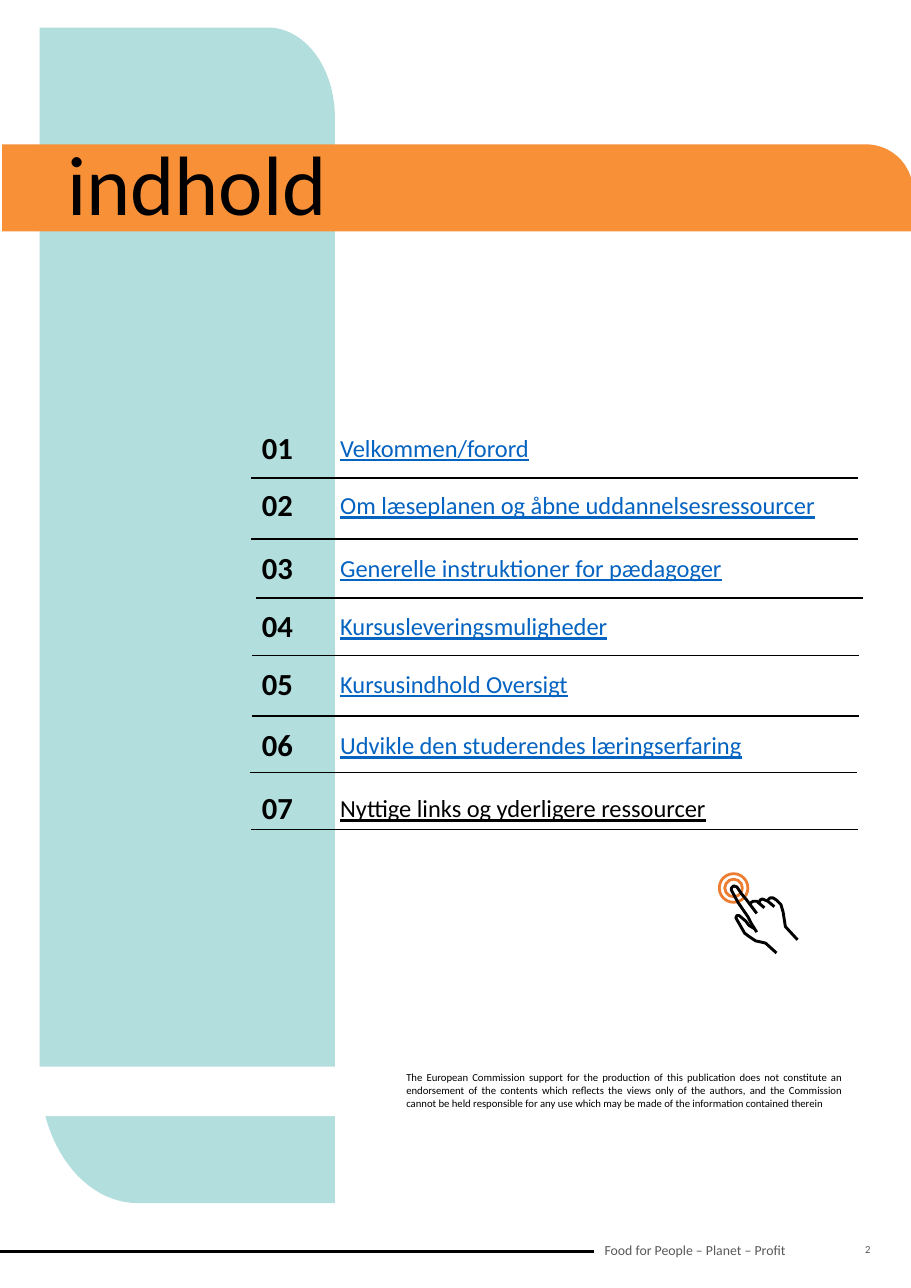
from math import cos, pi, sin

from pptx import Presentation
from pptx.dml.color import RGBColor
from pptx.enum.shapes import MSO_CONNECTOR, MSO_SHAPE
from pptx.enum.text import MSO_ANCHOR as Anchor, PP_ALIGN as Align
from pptx.oxml.ns import qn
from pptx.util import Inches, Pt
from lxml.etree import SubElement

COLORS = {"mint": "B2DEDD", "orange": "F79037", "ring": "ED7D31", "link": "0563C1",
          "black": "000000", "grey": "595959", "white": "FFFFFF"}
WIDTH, HEIGHT = 8.27, 11.69


def put_text(text, left, top, width, height, size, color="black", bold=False,
             underline=False, align=Align.LEFT, anchor=Anchor.MIDDLE,
             spacing=None, before=0):
    frame = slide.shapes.add_textbox(
        Inches(left), Inches(top), Inches(width), Inches(height)).text_frame
    frame.word_wrap = True
    frame.vertical_anchor = anchor
    paragraph = frame.paragraphs[0]
    paragraph.alignment = align
    paragraph.line_spacing = spacing
    paragraph.space_before = Pt(before)
    run = paragraph.add_run()
    run.text = text
    font = run.font
    font.name, font.size = "Calibri", Pt(size)
    font.bold, font.underline = bold, underline
    font.color.rgb = RGBColor.from_string(COLORS[color])


def paint(shape, fill=None, line=None, weight=1):
    """Set fill and line, each left empty when no colour is named, and drop the shadow."""
    shape.shadow.inherit = False
    if fill:
        shape.fill.solid()
        shape.fill.fore_color.rgb = RGBColor.from_string(COLORS[fill])
    else:
        shape.fill.background()
    if line:
        shape.line.color.rgb = RGBColor.from_string(COLORS[line])
        shape.line.width = Pt(weight)
    else:
        shape.line.fill.background()


presentation = Presentation()
presentation.slide_width, presentation.slide_height = Inches(WIDTH), Inches(HEIGHT)
slide = presentation.slides.add_slide(presentation.slide_layouts[6])

# Rounded corners: centre, radii and start angle of a clockwise quarter turn
corners = {"column_top": (2.43, 1.06, 0.61, 0.81, -pi / 2),
           "column_bottom": (1.25, 9.73, 0.89, 1.19, pi / 2),
           "band": (7.86, 1.74, 0.43, 0.43, -pi / 2)}
STEPS = 24
arcs = {name: [(x + rx * cos(start + i * pi / 2 / STEPS),
                y + ry * sin(start + i * pi / 2 / STEPS)) for i in range(STEPS + 1)]
        for name, (x, y, rx, ry, start) in corners.items()}
column = [(0.36, 0.25), *arcs["column_top"], (3.04, 10.92), *arcs["column_bottom"]]
band = [(0.02, 2.1), (0.02, 1.31), *arcs["band"], (8.29, 2.1)]

# Pointing hand, one open stroke for each part
hand = [
    [(6.87, 8.46), (6.82, 8.38), (6.79, 8.32), (6.7, 8.19), (6.64, 8.08), (6.64, 8.06),
     (6.66, 8.04), (6.69, 8.05), (6.73, 8.11), (6.78, 8.17), (6.87, 8.29)],
    [(6.85, 8.43), (6.8, 8.4), (6.77, 8.36), (6.71, 8.31), (6.69, 8.31), (6.68, 8.33),
     (6.72, 8.4), (6.76, 8.47), (6.8, 8.5), (6.86, 8.54), (6.95, 8.56), (7.05, 8.65)],
    [(6.81, 8.21), (6.82, 8.19), (6.84, 8.18), (6.87, 8.18), (6.94, 8.24)],
    [(6.89, 8.2), (6.9, 8.17), (6.92, 8.16), (6.97, 8.18), (7.03, 8.23)],
    [(6.97, 8.17), (6.99, 8.15), (7.02, 8.15), (7.05, 8.17), (7.09, 8.21),
     (7.11, 8.28), (7.13, 8.41), (7.24, 8.53)],
]

for ring_radius in (0.13, 0.08):
    ring = slide.shapes.add_shape(
        MSO_SHAPE.OVAL, Inches(6.66 - ring_radius), Inches(8.06 - ring_radius),
        Inches(2 * ring_radius), Inches(2 * ring_radius))
    paint(ring, line="ring", weight=1.8)

outlines = [(column, "mint", None), (band, "orange", None)]
outlines += [(stroke, None, "black") for stroke in hand]
for points, fill, line in outlines:
    (start_x, start_y), *rest = [(x * 1000, y * 1000) for x, y in points]
    builder = slide.shapes.build_freeform(start_x, start_y, scale=Inches(1) / 1000)
    builder.add_line_segments(rest, close=fill is not None)
    paint(builder.convert_to_shape(), fill, line, weight=1.9)

column_gap = slide.shapes.add_shape(
    MSO_SHAPE.RECTANGLE, Inches(0.23), Inches(9.68), Inches(2.86), Inches(0.45))
paint(column_gap, "white")

put_text("indhold", 0.51, 1.25, 7.45, 1.17, 55, anchor=Anchor.TOP, spacing=0.9, before=8.3)

# Text top, rule left, rule height, title
contents = [
    (3.89, 2.28, 4.34, "Velkommen/forord"),
    (4.41, 2.28, 4.89, "Om læseplanen og åbne uddannelsesressourcer"),
    (4.98, 2.32, 5.43, "Generelle instruktioner for pædagoger"),
    (5.51, 2.29, 5.95, "Kursusleveringsmuligheder"),
    (6.03, 2.29, 6.5, "Kursusindhold Oversigt"),
    (6.59, 2.27, 7.01, "Udvikle den studerendes læringserfaring"),
    (7.16, 2.28, 7.53, "Nyttige links og yderligere ressourcer"),
]
rules = [(0, 5.39, 11.36, 1.5)]
for number, (top, rule_left, rule_y, title) in enumerate(contents, 1):
    title_color = "black" if number == len(contents) else "link"
    put_text(f"{number:02}", 2.28, top, 0.71, 0.38, 20, bold=True, spacing=0.9, before=8.3)
    put_text(title, 2.99, top, 5.28, 0.38, 16, title_color, underline=True,
             spacing=0.9, before=8.3)
    rules.append((rule_left, rule_left + 5.51, rule_y, 1))

for left, right, y, weight in rules:
    rule = slide.shapes.add_connector(
        MSO_CONNECTOR.STRAIGHT, Inches(left), Inches(y), Inches(right), Inches(y))
    rule.line.color.rgb = RGBColor.from_string(COLORS["black"])
    rule.line.width = Pt(weight)
    SubElement(rule._element.spPr, qn("a:effectLst"))

put_text("The European Commission support for the production of this publication does not "
         "constitute an endorsement of the contents which reflects the views only of the "
         "authors, and the Commission cannot be held responsible for any use which may be "
         "made of the information contained therein",
         3.59, 9.67, 4.15, 0.45, 7, align=Align.JUSTIFY, anchor=Anchor.TOP)
put_text("Food for People – Planet – Profit", 5.39, 11.15, 1.87, 0.4, 9, "grey")
put_text("2", 7.54, 11.08, 0.46, 0.51, 7, "grey", align=Align.RIGHT)

presentation.save("out.pptx")
